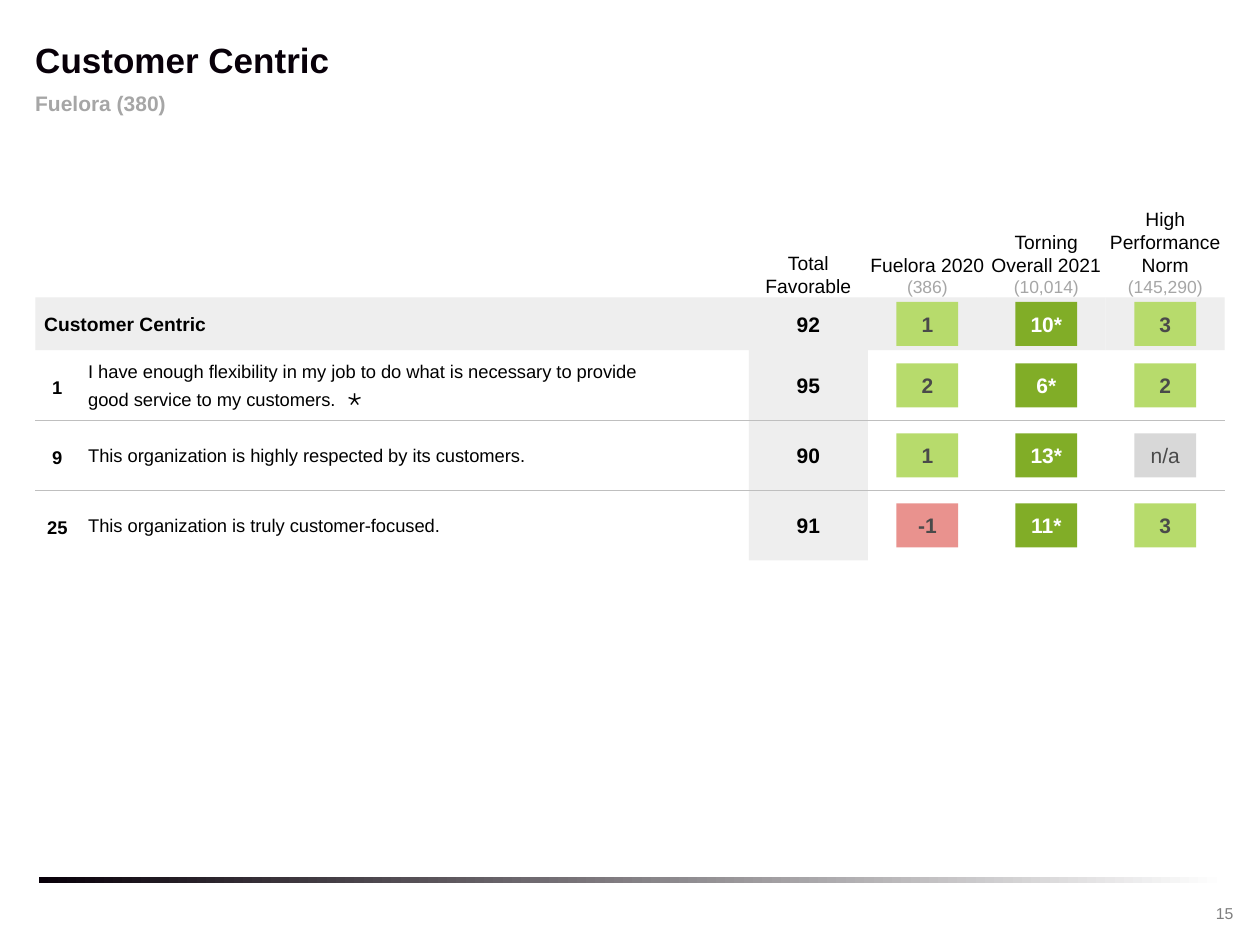
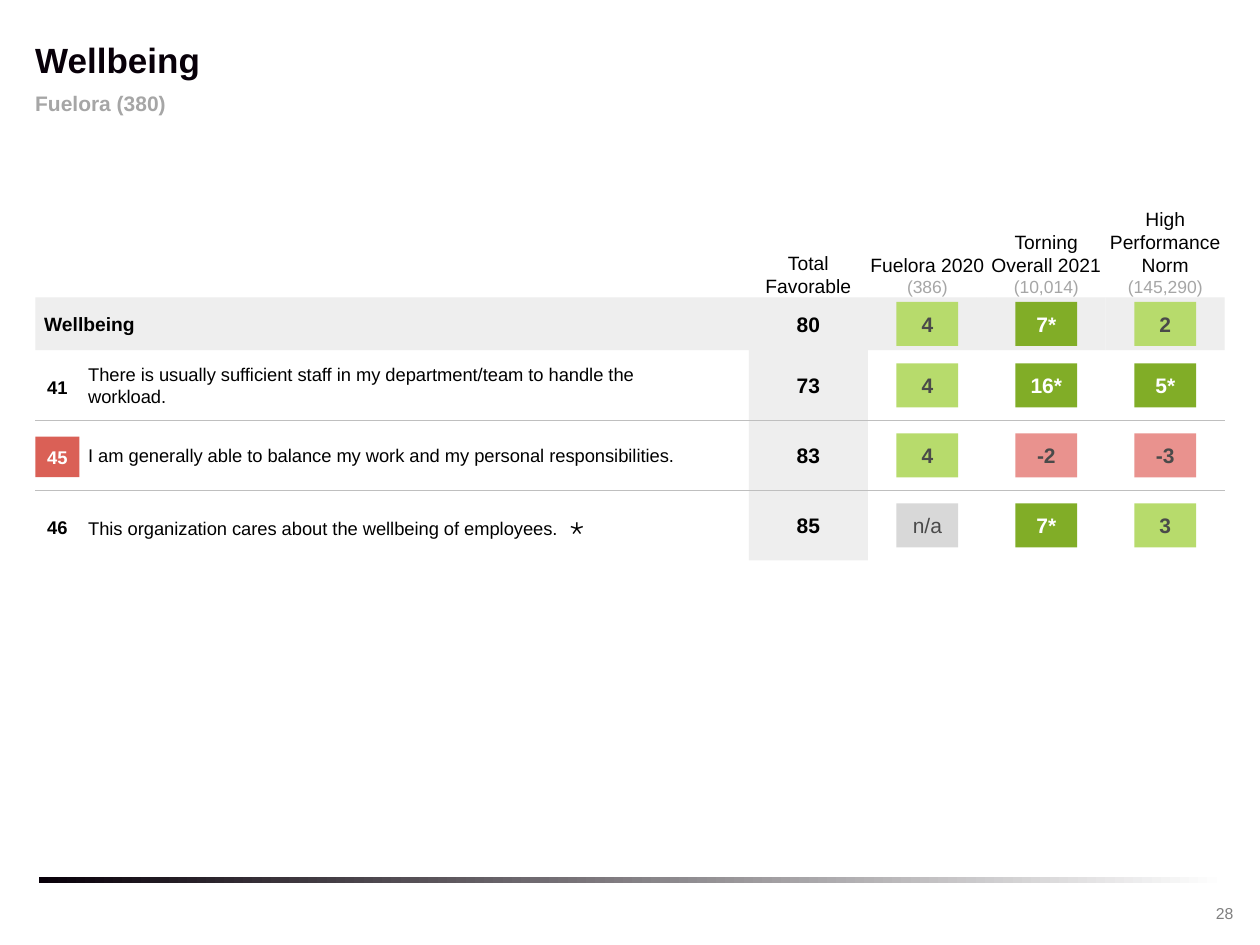
"""Build two survey score slides with colour-coded comparison chips."""
from dataclasses import dataclass

from lxml.etree import SubElement
from pptx import Presentation
from pptx.dml.color import RGBColor
from pptx.enum.shapes import MSO_CONNECTOR, MSO_SHAPE
from pptx.enum.text import MSO_ANCHOR, PP_ALIGN
from pptx.oxml.ns import qn
from pptx.util import Inches, Pt


@dataclass(frozen=True)
class Theme:
    font: str = "Arial"
    ink: str = "080009"
    black: str = "000000"
    white: str = "FFFFFF"
    muted: str = "A6A6A6"
    page: str = "7F7F7F"
    chip_ink: str = "4A4A4A"
    band: str = "EEEEEE"
    rule: str = "BFBFBF"
    better: str = "B7DB6C"
    much_better: str = "81AD27"
    worse: str = "E9928E"
    missing: str = "D8D8D8"
    alert: str = "DA6056"
    title_pt: float = 20
    score_pt: float = 12
    head_pt: float = 11
    item_pt: float = 10.5
    count_pt: float = 10
    page_pt: float = 9
    star_pt: float = 14


T = Theme()
W, H = 10, 7.5
LEFT = 0.028 * W
SPAN = W - 2 * LEFT
COL = SPAN / 10
LABEL_W = 6 * COL
NUM_W = 0.35
TOP, HEAD_H, ROW_H = 2.36, 0.42, 0.556
BODY = TOP + HEAD_H
CHIP_W, CHIP_H = 0.49, 0.35
COL_X = [LEFT + LABEL_W + i * COL for i in range(4)]
LEFT_AL, CENTER = PP_ALIGN.LEFT, PP_ALIGN.CENTER
MIDDLE, BOTTOM = MSO_ANCHOR.MIDDLE, MSO_ANCHOR.BOTTOM

GROUP = "Fuelora (380)"
HEADS = [
    ("Fuelora 2020", "(386)"),
    ("Torning Overall 2021", "(10,014)"),
    ("High Performance Norm", "(145,290)"),
]
SLIDES = [
    ("Customer Centric", "15", ["92", "1", "10*", "3"], [
        ("1", "I have enough flexibility in my job to do what is necessary to "
              "provide good service to my customers. ", True, False, ["95", "2", "6*", "2"]),
        ("9", "This organization is highly respected by its customers.",
         False, False, ["90", "1", "13*", "n/a"]),
        ("25", "This organization is truly customer-focused.",
         False, False, ["91", "-1", "11*", "3"]),
    ]),
    ("Wellbeing", "28", ["80", "4", "7*", "2"], [
        ("41", "There is usually sufficient staff in my department/team to "
               "handle the workload.", False, False, ["73", "4", "16*", "5*"]),
        ("45", "I am generally able to balance my work and my personal "
               "responsibilities.", False, True, ["83", "4", "-2", "-3"]),
        ("46", "This organization cares about the wellbeing of employees. ",
         True, False, ["85", "n/a", "7*", "3"]),
    ]),
]


def box(s, x, y, w, h, runs=(), al=LEFT_AL, anchor=MIDDLE, ins=(0, 0, 0, 0),
        fill=None, wrap=True):
    """Add a plain or filled box; each run is (text, size, colour, bold)."""
    at = [Inches(v) for v in (x, y, w, h)]
    if fill:
        sp = s.shapes.add_shape(MSO_SHAPE.RECTANGLE, *at)
        sp.shadow.inherit = False
        sp.line.fill.background()
        sp.fill.solid()
        sp.fill.fore_color.rgb = RGBColor.from_string(fill)
    else:
        sp = s.shapes.add_textbox(*at)
    tf = sp.text_frame
    frame = {"word_wrap": wrap, "vertical_anchor": anchor}
    sides = ("margin_left", "margin_top", "margin_right", "margin_bottom")
    frame.update(zip(sides, map(Inches, ins)))
    for key, value in frame.items():
        setattr(tf, key, value)
    p = tf.paragraphs[0]
    p.alignment = al
    for text, size, color, bold in runs:
        if text.startswith("\n"):
            p.add_line_break()
        r = p.add_run()
        r.text = text.lstrip("\n")
        for key, value in {"name": T.font, "size": Pt(size), "bold": bold}.items():
            setattr(r.font, key, value)
        r.font.color.rgb = RGBColor.from_string(color)
    return sp


def scores(s, y, h, values):
    """Add the total and the three comparison chips, centred in a row."""
    total, *chips = values
    box(s, COL_X[0], y + (h - 0.2) / 2, COL, 0.2,
        [(total, T.score_pt, T.black, True)], CENTER)
    for x, text in zip(COL_X[1:], chips):
        fill, color = T.better, T.chip_ink
        if text == "n/a":
            fill = T.missing
        elif text.startswith("-"):
            fill = T.worse
        elif text.endswith("*"):
            fill, color = T.much_better, T.white
        box(s, x + (COL - CHIP_W) / 2, y + (h - CHIP_H) / 2, CHIP_W, CHIP_H,
            [(text, T.score_pt, color, text != "n/a")], CENTER, fill=fill, wrap=False)


prs = Presentation()
prs.slide_width, prs.slide_height = Inches(W), Inches(H)

for title, page, overall, items in SLIDES:
    s = prs.slides.add_slide(prs.slide_layouts[6])

    bar = box(s, 0.31, 6.96, 9.42, 0.05, fill=T.ink)
    bar.fill.gradient()
    bar.fill.gradient_angle = 0
    for stop, color in zip(bar.fill.gradient_stops, (T.ink, T.white)):
        stop.color.rgb = RGBColor.from_string(color)
    box(s, 9.46, 7.12, 0.52, 0.25, [(page, T.page_pt, T.page, False)],
        CENTER, MSO_ANCHOR.TOP, (0.1, 0.05, 0.1, 0.05))
    box(s, LEFT, 0.28, SPAN, 0.38, [(title, T.title_pt, T.ink, True)])
    box(s, LEFT, 0.71, SPAN, 0.21, [(GROUP, T.score_pt, T.muted, True)])

    for i in range(len(items)):
        box(s, COL_X[0], BODY + i * ROW_H, COL, ROW_H, fill=T.band)
    for x in COL_X:
        box(s, x, TOP, COL, HEAD_H, fill=T.band)
    box(s, LEFT, TOP, LABEL_W, HEAD_H, [(title, T.head_pt, T.black, True)],
        ins=(0.07, 0, 0.07, 0), fill=T.band)

    box(s, COL_X[0], TOP - 1.11, COL, 1.11,
        [("Total Favorable", T.head_pt, T.black, False)], CENTER, BOTTOM)
    for x, (head, count) in zip(COL_X[1:], HEADS):
        box(s, x, TOP - 1.39, COL, 1.39,
            [(head, T.head_pt, T.black, False),
             ("\n" + count, T.count_pt, T.muted, False)], CENTER, BOTTOM)
    scores(s, TOP, HEAD_H, overall)

    for i, (number, text, starred, flagged, values) in enumerate(items):
        y = BODY + i * ROW_H
        if i:
            ln = s.shapes.add_connector(MSO_CONNECTOR.STRAIGHT, Inches(LEFT), Inches(y),
                                        Inches(LEFT + SPAN), Inches(y))
            ln.line.width = Pt(0.75)
            ln.line.color.rgb = RGBColor.from_string(T.rule)
            SubElement(ln._element.spPr, qn("a:effectLst"))
        box(s, LEFT, y + 0.13, NUM_W, 0.32,
            [(number, T.item_pt, T.white if flagged else T.black, True)], CENTER,
            fill=T.alert if flagged else None)
        runs = [(text, T.item_pt, T.black, False)]
        if starred:
            runs.append((" ⋆", T.star_pt, T.black, False))
        box(s, LEFT + NUM_W, y + 0.05, 5.1, 0.46, runs, ins=(0.07, 0, 0.35, 0))
        scores(s, y, ROW_H, values)

prs.save("out.pptx")
